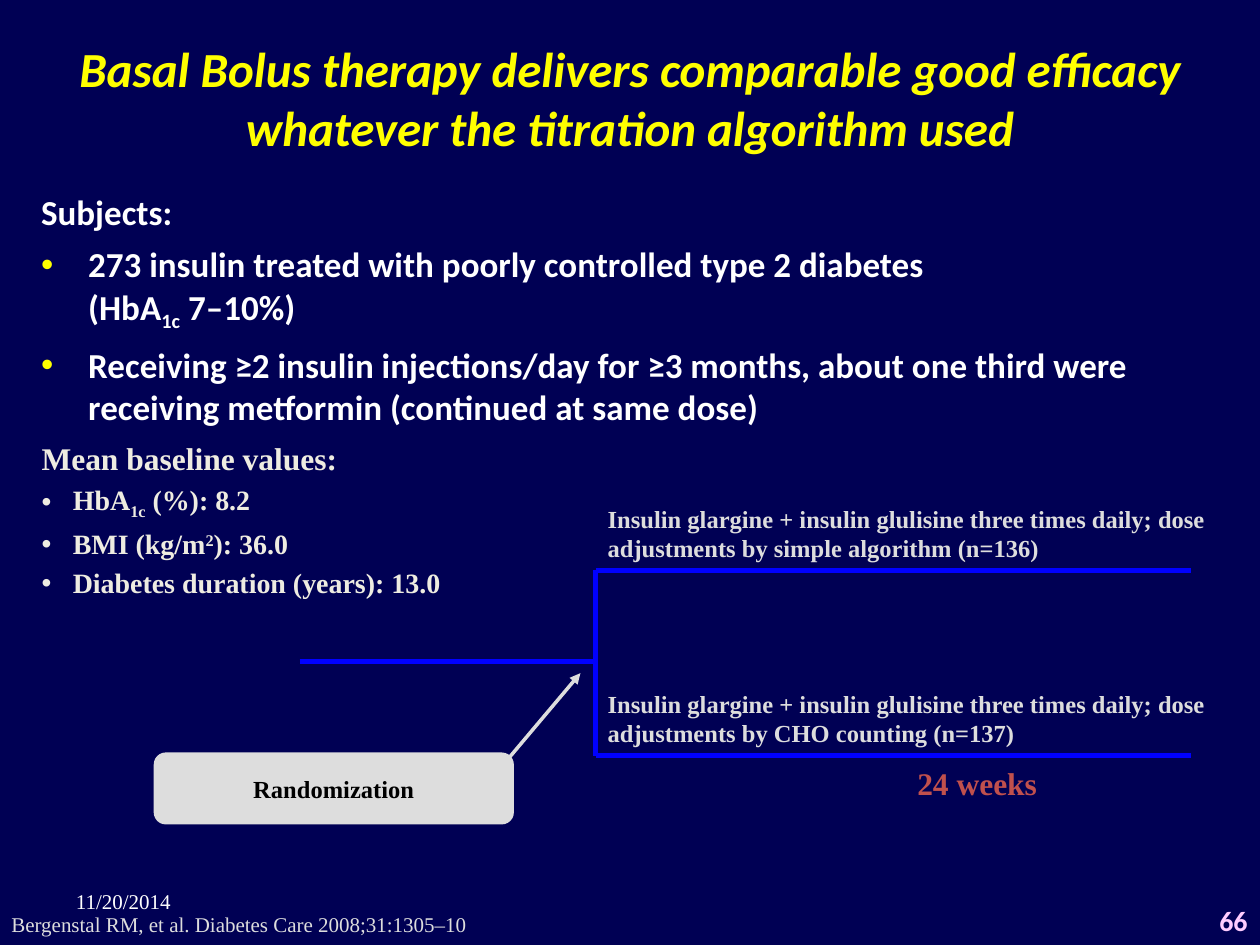
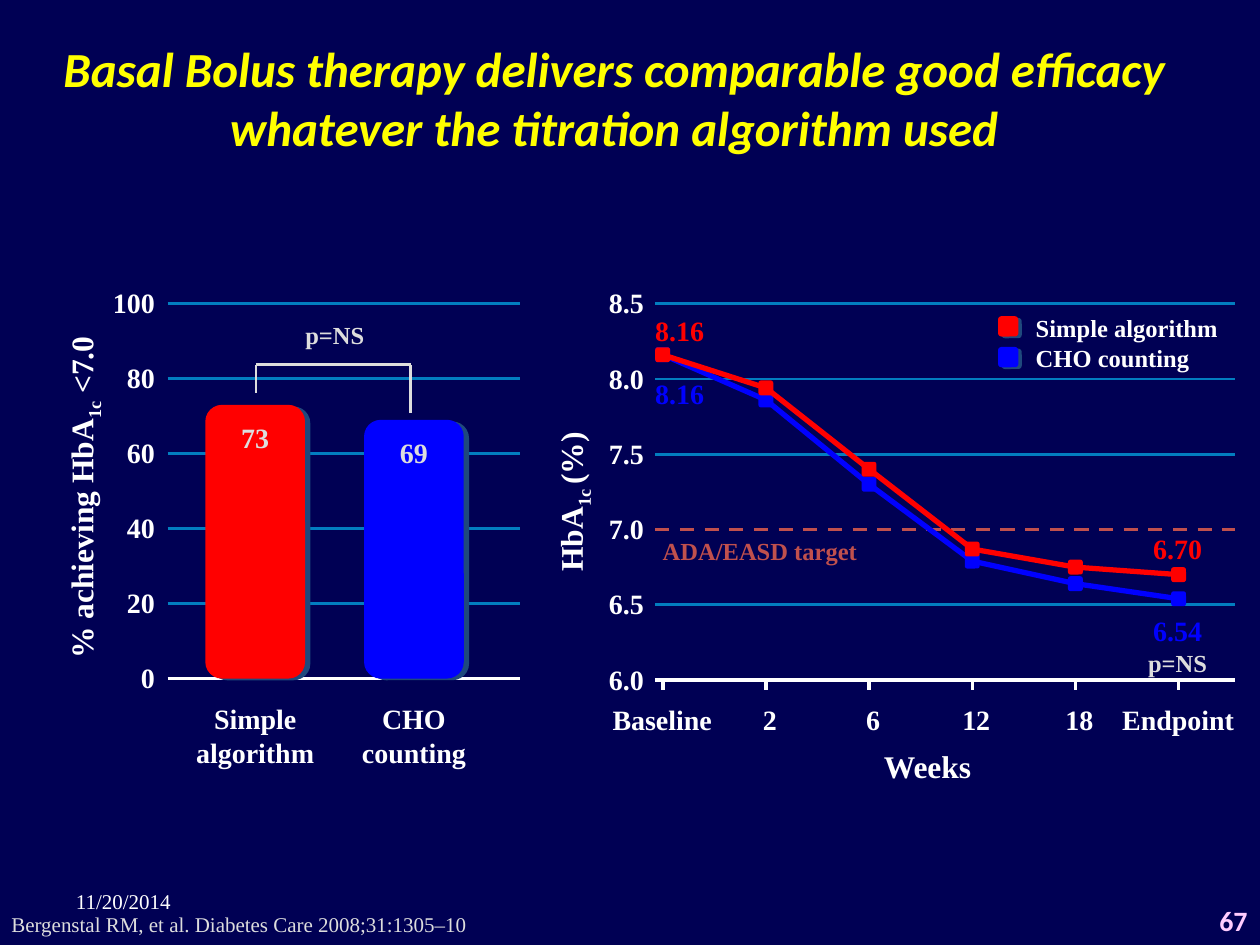
from pptx import Presentation
from pptx.dml.color import RGBColor
from pptx.enum.dml import MSO_LINE
from pptx.enum.shapes import MSO_CONNECTOR, MSO_SHAPE
from pptx.enum.text import MSO_ANCHOR, PP_ALIGN
from pptx.oxml.ns import qn
from pptx.util import Cm, Pt
from lxml.etree import SubElement

NAVY = RGBColor(0x00, 0x00, 0x54)
YELLOW = RGBColor(0xFF, 0xFF, 0x00)
WHITE = RGBColor(0xFF, 0xFF, 0xFF)
BLACK = RGBColor(0x00, 0x00, 0x00)
GREY = RGBColor(0xDD, 0xDD, 0xDD)
CREAM = RGBColor(0xEE, 0xEC, 0xE1)
PINK = RGBColor(0xFF, 0xCC, 0xFF)
BRICK = RGBColor(0xC0, 0x50, 0x4D)
RED = RGBColor(0xFF, 0x00, 0x00)
BLUE = RGBColor(0x00, 0x00, 0xFF)
TEAL = RGBColor(0x02, 0x7D, 0xC0)
SHADE = "1F497D"
SERIF, SANS = "Times New Roman", "Calibri"
SUB, SUPER = -25, 30

# Content: a rich paragraph is a list of (text, baseline shift in percent)
TITLE = ("Basal Bolus therapy delivers comparable good efficacy "
         "whatever the titration algorithm used")
SOURCE = "Bergenstal RM, et al. Diabetes Care 2008;31:1305–10"
DATE = "11/20/2014"

SUBJECTS = [
    "Subjects:",
    [("273 insulin treated with poorly controlled type 2 diabetes\n(HbA", 0),
     ("1c", SUB), (" 7–10%)", 0)],
    "Receiving ≥2 insulin injections/day for ≥3 months, about one third were "
    "receiving metformin (continued at same dose)",
]
BASELINE = [
    "Mean baseline values:",
    [("HbA", 0), ("1c", SUB), (" (%): 8.2", 0)],
    [("BMI (kg/m", 0), ("2", SUPER), ("): 36.0", 0)],
    "Diabetes duration (years): 13.0",
]
ARM = "Insulin glargine + insulin glulisine three times daily; dose adjustments by "
ARMS = [(ARM + "simple algorithm (n=136)", 11.5),
        (ARM + "CHO counting (n=137)", 15.23)]

BARS = [("Simple\nalgorithm", 73, RED), ("CHO\ncounting", 69, BLUE)]
SHARE = [("% achieving HbA", 0), ("1c", SUB), (" <7.0", 0)]
LEVEL = [("HbA", 0), ("1c ", SUB), ("(%)", 0)]
WEEKS = ["Baseline", "2", "6", "12", "18", "Endpoint"]
CURVES = [("CHO counting", BLUE, [8.16, 7.86, 7.30, 6.79, 6.64, 6.54]),
          ("Simple algorithm", RED, [8.16, 7.94, 7.40, 6.87, 6.75, 6.70])]
TARGET = 7.0
# Label heights for the first and last value of each curve
ENDS = {BLUE: (7.92, 12.71), RED: (6.65, 11.06)}

ALIGN = {"l": PP_ALIGN.LEFT, "c": PP_ALIGN.CENTER, "r": PP_ALIGN.RIGHT}
START = {"l": 0, "c": 0.5, "r": 1}


def write(para, words, size, color, face=SERIF, bold=True, italic=False):
    parts = [(words, 0)] if isinstance(words, str) else words
    para.text = parts[0][0]
    for text, shift in parts[1:]:
        run = para.add_run()
        run.text = text
        if shift:
            run._r.get_or_add_rPr().set("baseline", str(shift * 1000))
    for run in para.runs:
        font = run.font
        font.size, font.name, font.bold, font.italic = Pt(size), face, bold, italic
        font.color.rgb = color


def add_box(slide, x, y, w, h):
    box = slide.shapes.add_textbox(Cm(x), Cm(y), Cm(w), Cm(h))
    frame = box.text_frame
    frame.word_wrap = True
    frame.margin_left = frame.margin_right = 0
    frame.margin_top = frame.margin_bottom = 0
    return box


def label(slide, words, x, y, w, size, color, align="c", h=1, **style):
    """Text centred vertically on y; x is its left, centre or right by align."""
    box = add_box(slide, x - START[align] * w, y - h / 2, w, h)
    box.text_frame.vertical_anchor = MSO_ANCHOR.MIDDLE
    para = box.text_frame.paragraphs[0]
    write(para, words, size, color, **style)
    para.alignment = ALIGN[align]
    return box


def axis_name(slide, words, x, y, h):
    """A label that reads upwards."""
    box = label(slide, words, x, y, 1, 18, WHITE, h=h)
    box.text_frame._txBody.bodyPr.set("vert", "vert270")


def bullets(slide, paras, x, y, w, h, sizes, color, gap, hang, dot, face):
    """A heading and the bulleted lines under it."""
    frame = add_box(slide, x, y, w, h).text_frame
    for i, words in enumerate(paras):
        para = frame.add_paragraph() if i else frame.paragraphs[0]
        if i:
            para.space_before = Pt(gap)
            props = para._p.get_or_add_pPr()
            props.set("marL", str(Cm(hang)))
            props.set("indent", str(-Cm(hang)))
            tint = SubElement(props, qn("a:buClr"))
            SubElement(tint, qn("a:srgbClr")).set("val", str(dot))
            SubElement(props, qn("a:buFont")).set("typeface", "Arial")
            SubElement(props, qn("a:buChar")).set("char", "•")
        write(para, words, sizes[min(i, 1)], color, face)


def rule(slide, x1, y1, x2, y2, color, width):
    line = slide.shapes.add_connector(
        MSO_CONNECTOR.STRAIGHT, Cm(x1), Cm(y1), Cm(x2), Cm(y2))
    line.line.color.rgb = color
    line.line.width = Pt(width)
    SubElement(line._element.spPr, qn("a:effectLst"))
    return line


def block(slide, x, y, w, h, color, drop=None):
    """A rounded rectangle; drop is the shadow's distance and angle."""
    shape = slide.shapes.add_shape(
        MSO_SHAPE.ROUNDED_RECTANGLE, Cm(x), Cm(y), Cm(w), Cm(h))
    shape.fill.solid()
    shape.fill.fore_color.rgb = color
    shape.line.fill.background()
    shape.shadow.inherit = False
    if drop:
        effects = shape._element.spPr.find(qn("a:effectLst"))
        shadow = SubElement(effects, qn("a:outerShdw"))
        shadow.set("dist", str(Pt(drop[0])))
        shadow.set("dir", str(drop[1] * 60000))
        shadow.set("algn", "ctr")
        shadow.set("rotWithShape", "0")
        SubElement(shadow, qn("a:srgbClr")).set("val", SHADE)
    return shape


def add_page(deck, number, middle):
    """A slide with the shared background, title and footers."""
    slide = deck.slides.add_slide(deck.slide_layouts[6])
    slide.background.fill.solid()
    slide.background.fill.fore_color.rgb = NAVY
    label(slide, TITLE, middle, 1.97, 24.6, 28, YELLOW, h=3.94,
          face=SANS, italic=True)
    label(slide, SOURCE, 0.23, 18.64, 18, 12, GREY, "l", h=0.5, bold=False)
    label(slide, DATE, 1.53, 18.16, 5.4, 12, WHITE, "l", h=0.5, bold=False)
    label(slide, str(number), 25.15, 18.56, 5.4, 16, PINK, "r", h=0.9, face=SANS)
    return slide


def add_design(deck):
    slide = add_page(deck, 66, 12.7)
    bullets(slide, SUBJECTS, 0.83, 3.84, 23.44, 5, (20, 20), WHITE,
            6, 0.95, YELLOW, SANS)
    bullets(slide, BASELINE, 0.84, 8.86, 10.2, 3.3, (18, 16), CREAM,
            3.2, 0.63, CREAM, SERIF)

    label(slide, "24 weeks", 19.7, 15.78, 3.6, 18, BRICK)
    arrow = rule(slide, 9.5, 16.18, 11.7, 13.57, GREY, 2)
    SubElement(arrow.line._get_or_add_ln(), qn("a:tailEnd")).set("type", "triangle")
    start = block(slide, 3.1, 15.17, 7.26, 1.45, GREY)
    start.text_frame.vertical_anchor = MSO_ANCHOR.MIDDLE
    para = start.text_frame.paragraphs[0]
    write(para, "Randomization", 14, BLACK)
    para.alignment = PP_ALIGN.CENTER

    fork = 12.01
    for words, y in ARMS:
        label(slide, words, 12.25, y - 0.75, 12.4, 14, GREY, "l", h=1.4)
        rule(slide, fork, y, 24, y, BLUE, 3)
    rule(slide, 6.04, 13.33, fork, 13.33, BLUE, 3)
    rule(slide, fork, ARMS[0][1], fork, ARMS[1][1], BLUE, 3)


def scale(low, high, top, base):
    """Returns the function from a value to its height on the slide."""
    return lambda value: base - (value - low) / (high - low) * (base - top)


def add_grid(slide, ticks, place, left, right, edge, form):
    stub = left + 0.2
    for i, tick in enumerate(ticks):
        y = place(tick)
        label(slide, form.format(tick), edge, y - 0.02, 1.5, 16, WHITE, "r")
        if i == 0:
            rule(slide, left, y, stub, y, WHITE, 2)
            rule(slide, stub, y, right, y, WHITE, 2)
        elif tick == TARGET:
            line = rule(slide, left, y, right, y, BRICK, 2)
            line.line.dash_style = MSO_LINE.DASH
        else:
            rule(slide, left, y, right, y, TEAL, 1.5)


def add_bars(slide):
    base, wide = 13.68, 2.01
    place = scale(0, 100, 6.12, base)
    add_grid(slide, range(0, 101, 20), place, 3.38, 10.49, 3.12, "{}")
    axis_name(slide, SHARE, 1.68, 10.03, 8)
    for i, (name, value, color) in enumerate(BARS):
        x, top = 4.14 + 3.2 * i, place(value)
        mid = x + wide / 2
        block(slide, x, top, wide, base - top, color, (3.2, 18))
        label(slide, str(value), mid, top + 0.66, wide, 16, GREY)
        label(slide, name, mid, 14.82, 3, 16, WHITE, h=1.4)
    left, right, y = 5.16, 8.28, 7.35
    rule(slide, left, y, right, y, GREY, 1.5)
    rule(slide, left, 7.92, left, y, GREY, 1.5)
    rule(slide, right, 8.33, right, y, GREY, 1.5)
    label(slide, "p=NS", 6.75, 6.74, 2.5, 14, GREY)


def add_curves(slide):
    base, dot, patch = 13.71, 0.3, 0.41
    place = scale(6, 8.5, 6.12, base)
    spots = [13.36 + 2.08 * i for i in range(len(WEEKS))]
    add_grid(slide, [6 + i / 2 for i in range(6)], place,
             13.21, 24.89, 12.98, "{:.1f}")
    axis_name(slide, LEVEL, 11.55, 10.12, 4)
    for name, x in zip(WEEKS, spots):
        rule(slide, x, base - 0.04, x, base + 0.2, WHITE, 2)
        nudge = 0.08 if name.isdigit() else -0.01
        label(slide, name, x + nudge, 14.51, 3, 16, WHITE)
    label(slide, "Weeks", 18.7, 15.44, 4, 18, WHITE)
    label(slide, "ADA/EASD target", 13.36, 11.1, 6, 14, BRICK, "l")
    label(slide, "p=NS", 23.74, 13.35, 2.5, 14, GREY)

    for name, color, values in CURVES:
        points = [(x, place(value)) for x, value in zip(spots, values)]
        for (x1, y1), (x2, y2) in zip(points, points[1:]):
            rule(slide, x1, y1, x2, y2, color, 3)
        for x, y in points:
            block(slide, x - dot / 2, y - dot / 2, dot, dot, color)
        first, last = ENDS[color]
        label(slide, f"{values[0]:.2f}", 13.7, first, 2, 16, color)
        label(slide, f"{values[-1]:.2f}", 23.74, last, 2, 16, color)

    for i, (name, color, _) in enumerate(reversed(CURVES)):
        y = 6.58 + 0.62 * i
        block(slide, 20.12, y - patch / 2, patch, patch, color, (2.2, 27))
        label(slide, name, 20.88, y + 0.02, 4.2, 14, WHITE, "l", h=0.6)


def main():
    deck = Presentation()
    deck.slide_width, deck.slide_height = Cm(25.4), Cm(19.05)
    add_design(deck)
    results = add_page(deck, 67, 12.38)
    add_bars(results)
    add_curves(results)
    deck.save("out.pptx")


if __name__ == "__main__":
    main()
